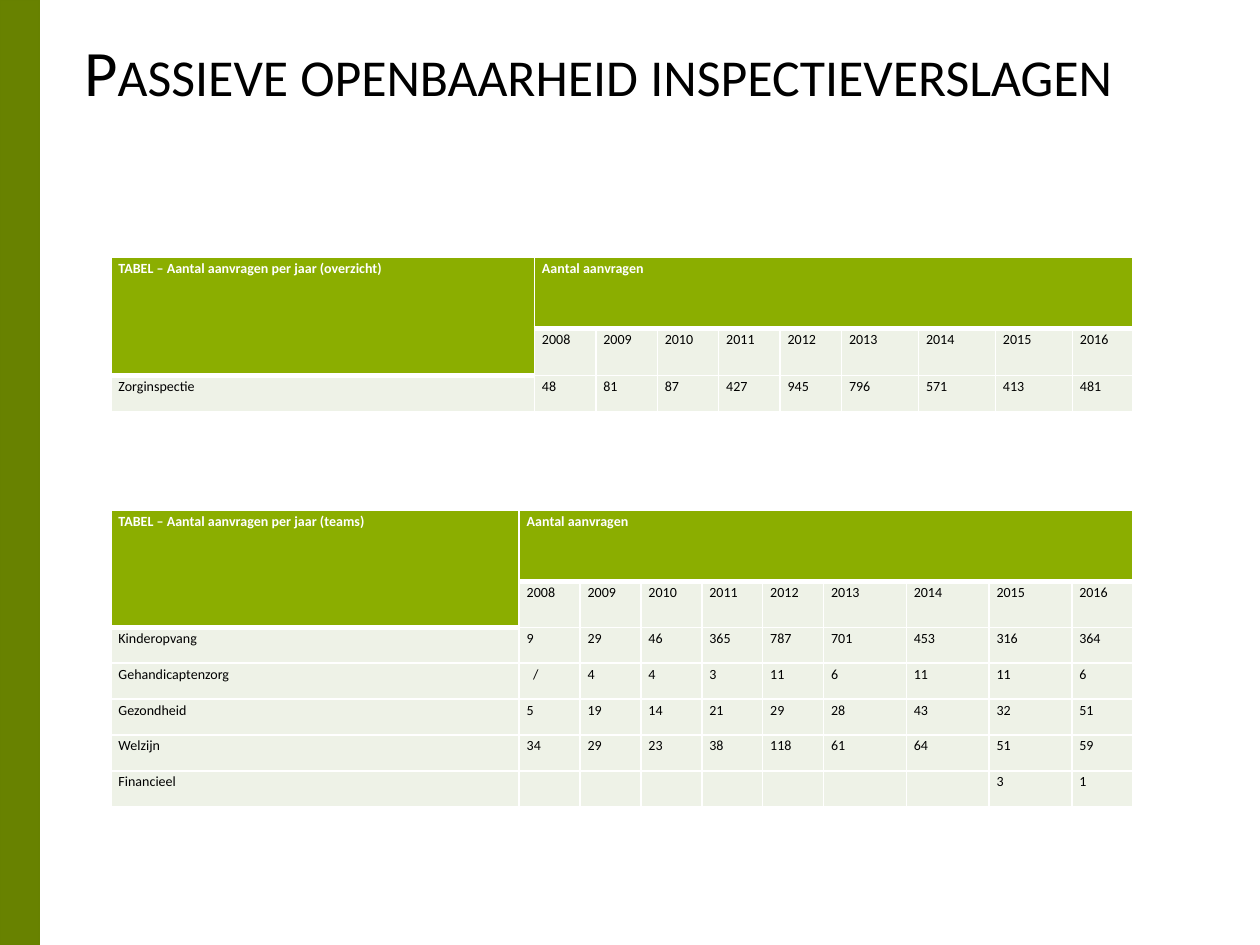
from lxml import etree
from pptx import Presentation
from pptx.dml.color import RGBColor
from pptx.enum import shapes, text
from pptx.oxml import ns
from pptx.util import Pt

COLORS = {
    "bar": "688200",
    "bar_line": "678100",
    "header": "8BAE00",
    "body": "EEF2E7",
    "white": "FFFFFF",
    "black": "000000",
}
YEARS = [str(year) for year in range(2008, 2017)]


class InspectionSlide:
    """Holds the style and the slide being filled."""

    font_name = "Calibri"
    cell_size = 8
    table_left = 63.4

    def __init__(self, deck):
        self.slide = deck.slides.add_slide(deck.slide_layouts[5])

    def color(self, key):
        return RGBColor.from_string(COLORS[key])

    def style_font(self, paragraph, size, color, bold=False):
        font = paragraph.font
        font.name, font.size, font.bold = self.font_name, Pt(size), bold
        font.color.rgb = self.color(color)

    def side_bar(self, width, height):
        bar = self.slide.shapes.add_shape(
            shapes.MSO_SHAPE.RECTANGLE, 0, 0, Pt(width), Pt(height))
        bar.shadow.inherit = False
        bar.fill.solid()
        bar.fill.fore_color.rgb = self.color("bar")
        bar.line.color.rgb = self.color("bar_line")
        bar.line.width = Pt(1)

    def title(self, wording, left, top, width, height):
        title = self.slide.shapes.title
        title.left, title.top = Pt(left), Pt(top)
        title.width, title.height = Pt(width), Pt(height)
        frame = title.text_frame
        frame.text = wording
        frame.word_wrap = True
        frame.auto_size = text.MSO_AUTO_SIZE.NONE
        frame.vertical_anchor = text.MSO_ANCHOR.TOP
        frame.margin_left = frame.margin_right = 0
        frame.margin_top = frame.margin_bottom = 0
        heading = frame.paragraphs[0]
        heading.alignment = text.PP_ALIGN.LEFT
        heading.line_spacing = Pt(38)
        self.style_font(heading, 37, "black")
        heading.runs[0].font._element.set("cap", "small")

    def border(self, cell, side, width):
        props = cell._tc.get_or_add_tcPr()
        line = etree.SubElement(props, ns.qn(f"a:ln{side}"), w=str(Pt(width)))
        fill = etree.SubElement(line, ns.qn("a:solidFill"))
        etree.SubElement(fill, ns.qn("a:srgbClr"), val=COLORS["white"])

    def cell(self, cell, wording, is_header, below_header):
        # Borders come before the fill in the cell properties
        for side, width in (("L", 1), ("R", 1), ("T", 3 if below_header else 1),
                            ("B", 3 if is_header else 1)):
            self.border(cell, side, width)
        cell.fill.solid()
        cell.fill.fore_color.rgb = self.color("header" if is_header else "body")
        cell.margin_left = cell.margin_right = Pt(4.3)
        cell.margin_top = cell.margin_bottom = 0
        cell.text = wording
        entry = cell.text_frame.paragraphs[0]
        entry.line_spacing = 1.15
        if wording == "/":
            entry._p.get_or_add_pPr().set("marL", str(Pt(3.6)))
        self.style_font(entry, self.cell_size,
                        "white" if is_header else "black", is_header)
        if not wording:
            etree.SubElement(entry._p, ns.qn("a:endParaRPr"),
                             sz=str(self.cell_size * 100))

    def request_table(self, heading, records, top, widths, heights):
        rows = [[heading, "Aantal aanvragen"] + [""] * (len(YEARS) - 1),
                [""] + YEARS] + records
        table = self.slide.shapes.add_table(
            len(rows), len(widths), Pt(self.table_left), Pt(top),
            Pt(sum(widths)), Pt(sum(heights))).table
        table.horz_banding = False
        for column, width in zip(table.columns, widths):
            column.width = Pt(width)
        for row, height in zip(table.rows, heights):
            row.height = Pt(height)

        def in_header(r, c):
            return r == 0 or (r == 1 and c == 0)

        for r, row in enumerate(rows):
            for c, wording in enumerate(row):
                is_header = in_header(r, c)
                below_header = r > 0 and not is_header and in_header(r - 1, c)
                self.cell(table.cell(r, c), wording, is_header, below_header)
        table.cell(0, 0).merge(table.cell(1, 0))
        table.cell(0, 1).merge(table.cell(0, len(YEARS)))


def main():
    deck = Presentation()
    deck.slide_width, deck.slide_height = Pt(720), Pt(540)
    page = InspectionSlide(deck)

    # Side bar and title
    page.side_bar(22.5, 540)
    page.title("Passieve openbaarheid inspectieverslagen", 48.2, 24.5, 638, 88)

    # Overview per year
    overview = [["Zorginspectie", "48", "81", "87", "427", "945", "796", "571",
                 "413", "481"]]
    page.request_table(
        "TABEL – Aantal aanvragen per jaar (overzicht)", overview, 146.9,
        [242] + [35.1] * 5 + [44] * 3 + [34.4], [41, 26.6, 21])

    # Requests per team
    teams = [
        ["Kinderopvang", "9", "29", "46", "365", "787", "701", "453", "316", "364"],
        ["Gehandicaptenzorg", "/", "4", "4", "3", "11", "6", "11", "11", "6"],
        ["Gezondheid", "5", "19", "14", "21", "29", "28", "43", "32", "51"],
        ["Welzijn", "34", "29", "23", "38", "118", "61", "64", "51", "59"],
        ["Financieel"] + [""] * 7 + ["3", "1"],
    ]
    page.request_table(
        "TABEL – Aantal aanvragen per jaar (teams)", teams, 291.8,
        [233.3] + [34.8] * 5 + [47.3] * 3 + [34.7],
        [40.6, 26.1] + [20.5] * len(teams))

    deck.save("out.pptx")


if __name__ == "__main__":
    main()
